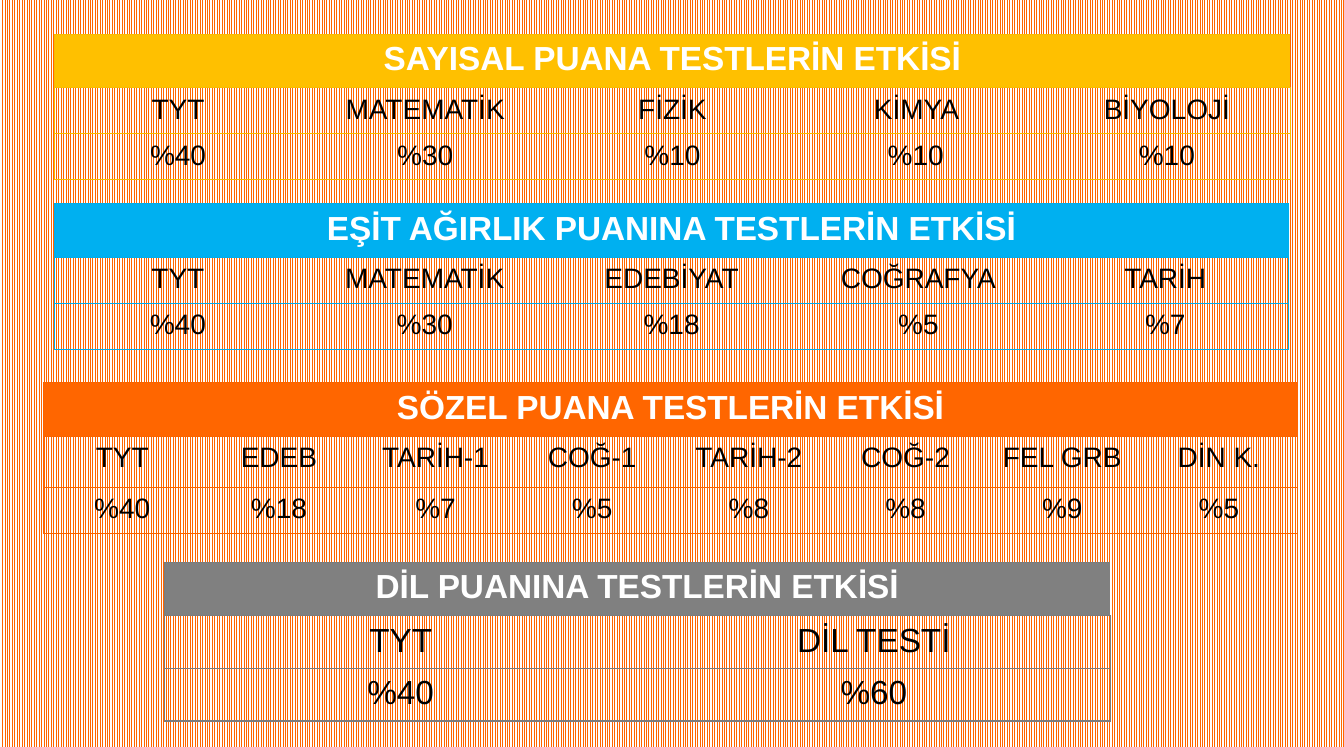
import pptx
import pptx.dml.color
import pptx.enum.dml
import pptx.enum.text
import pptx.oxml
import pptx.oxml.ns
import pptx.util

Pt = pptx.util.Pt
COLORS = {
    "stripe": "FF6600", "white": "FFFFFF", "black": "000000",
    "numeric": "FFC000", "numeric_line": "F9BC00",
    "equal": "00B0F0", "equal_line": "00ACEB",
    "verbal": "FF6600", "verbal_line": "F96400",
    "language": "808080", "language_line": "7C7C7C",
}
PLAIN_TABLE_STYLE = "{2D5ABB26-0587-4C30-8999-92F81FD0307C}"
HEADER_SIZE = 19

# title, colour key, box (left, top, width), row heights, body size, weights
SCORE_TABLES = [
    ("SAYISAL PUANA TESTLERİN ETKİSİ", "numeric", (31, 19.5, 704), (30.5, 26.25, 26.25), 16,
     [("TYT", "%40"), ("MATEMATİK", "%30"), ("FİZİK", "%10"), ("KİMYA ", "%10 "),
      ("BİYOLOJİ", "%10")]),
    ("EŞİT AĞIRLIK PUANINA TESTLERİN ETKİSİ", "equal", (31, 116, 703), (30.5, 26.25, 26.25), 16,
     [("TYT", "%40"), ("MATEMATİK", "%30"), ("EDEBİYAT", "%18"), ("COĞRAFYA", "%5"),
      ("TARİH", "%7")]),
    ("SÖZEL PUANA TESTLERİN ETKİSİ", "verbal", (25, 218, 714), (30.5, 29, 26.25), 16,
     [("TYT", "%40"), ("EDEB", "%18"), ("TARİH-1", "%7"), ("COĞ-1", "%5"),
      ("TARİH-2", "%8"), ("COĞ-2", "%8"), ("FEL GRB", "%9"), ("DİN K.", "%5")]),
    ("DİL PUANINA TESTLERİN ETKİSİ", "language", (93.5, 320.25, 539), (30.5, 30, 30), 19,
     [("TYT", "%40"), ("DİL TESTİ", "%60")]),
]


def rgb(name):
    return pptx.dml.color.RGBColor.from_string(COLORS[name])


def set_borders(cell, sides, color):
    """Draw the named sides (L, R, T, B order); must run before the cell fill."""
    properties = cell._tc.get_or_add_tcPr()
    for side in sides:
        properties.append(pptx.oxml.parse_xml(
            f'<a:ln{side} {pptx.oxml.ns.nsdecls("a")} w="{Pt(0.75)}"><a:solidFill>'
            f'<a:srgbClr val="{COLORS[color]}"/></a:solidFill></a:ln{side}>'))


def write_cell(cell, text, size, color, bold):
    cell.margin_left = cell.margin_right = Pt(9.4)
    cell.margin_top = cell.margin_bottom = Pt(3.6)
    paragraph = cell.text_frame.paragraphs[0]
    paragraph.alignment = pptx.enum.text.PP_ALIGN.CENTER
    run = paragraph.add_run()
    run.text = text
    run.font.name = "Arial"
    run.font.size = Pt(size)
    run.font.bold = bold
    run.font.color.rgb = rgb(color)


def add_score_table(slide, title, key, box, heights, body_size, weights):
    left, top, width = box
    count = len(weights)
    table = slide.shapes.add_table(
        3, count, Pt(left), Pt(top), Pt(width), Pt(sum(heights))).table
    table.first_row = table.horz_banding = False
    table._tbl.tblPr.find(pptx.oxml.ns.qn("a:tableStyleId")).text = PLAIN_TABLE_STYLE
    for column in table.columns:
        column.width = Pt(width / count)
    for row, height in zip(table.rows, heights):
        row.height = Pt(height)

    for row_index, row in enumerate(table.rows):
        for column_index, cell in enumerate(row.cells):
            sides = ["L"] * (column_index == 0) + ["R"] * (column_index == count - 1)
            set_borders(cell, sides + ["T", "B"], key + "_line")
            if row_index == 0:
                cell.fill.solid()
                cell.fill.fore_color.rgb = rgb(key)
            else:
                cell.fill.background()
                text = weights[column_index][row_index - 1]
                write_cell(cell, text, body_size, "black", False)

    header = table.cell(0, 0)
    header.merge(table.cell(0, count - 1))
    write_cell(header, title, HEADER_SIZE, "white", True)


def set_striped_background(slide):
    fill = slide.background.fill
    fill.patterned()
    fill.pattern = pptx.enum.dml.MSO_PATTERN.LIGHT_VERTICAL
    fill.fore_color.rgb = rgb("stripe")
    fill.back_color.rgb = rgb("white")


def main():
    presentation = pptx.Presentation()
    presentation.slide_width = Pt(765.5)
    presentation.slide_height = Pt(425.5)
    slide = presentation.slides.add_slide(presentation.slide_layouts[6])
    set_striped_background(slide)
    for score_table in SCORE_TABLES:
        add_score_table(slide, *score_table)
    presentation.save("out.pptx")


if __name__ == "__main__":
    main()
